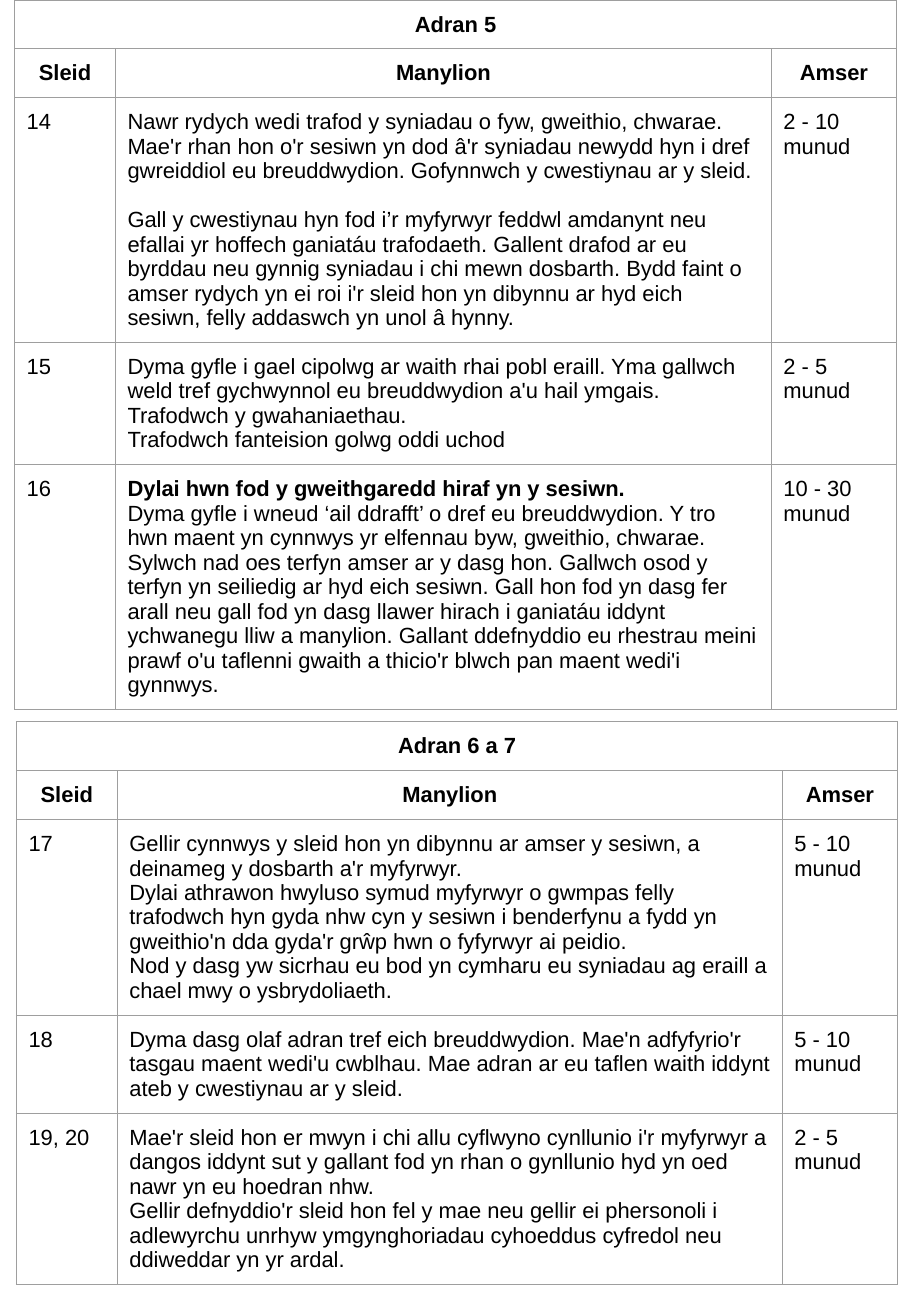
from dataclasses import dataclass

from lxml import etree
from pptx import Presentation
from pptx.dml.color import RGBColor
from pptx.enum.text import PP_ALIGN
from pptx.oxml.ns import qn
from pptx.util import Emu, Pt

CENTER = PP_ALIGN.CENTER
LEFT = PP_ALIGN.LEFT
PX = 4572
SLIDE_WIDTH, SLIDE_HEIGHT = 1500, 2166
HEADINGS = ("Sleid", "Manylion", "Amser")


@dataclass(frozen=True)
class Theme:
    font: str = "Arial"
    size: float = 13
    text: str = "000000"
    paper: str = "FFFFFF"
    border: str = "9E9E9E"
    border_width: float = 0.75
    inset: int = 20
    line: int = 40
    line_gap: float = 14.5


@dataclass(frozen=True)
class Line:
    text: str
    bold: bool = False
    gap: bool = False


SECTION_5 = [
    ("14", [
        Line("Nawr rydych wedi trafod y syniadau o fyw, gweithio, chwarae. Mae'r rhan hon o'r "
             "sesiwn yn dod â'r syniadau newydd hyn i dref gwreiddiol eu breuddwydion. "
             "Gofynnwch y cwestiynau ar y sleid."),
        Line("Gall y cwestiynau hyn fod i’r myfyrwyr feddwl amdanynt neu efallai yr hoffech "
             "ganiatáu trafodaeth. Gallent drafod ar eu byrddau neu gynnig syniadau i chi mewn "
             "dosbarth. Bydd faint o amser rydych yn ei roi i'r sleid hon yn dibynnu ar hyd "
             "eich sesiwn, felly addaswch yn unol â hynny.", gap=True),
    ], "2 - 10 munud", 9),
    ("15", [
        Line("Dyma gyfle i gael cipolwg ar waith rhai pobl eraill. Yma gallwch weld tref "
             "gychwynnol eu breuddwydion a'u hail ymgais."),
        Line("Trafodwch y gwahaniaethau."),
        Line("Trafodwch fanteision golwg oddi uchod"),
    ], "2 - 5 munud", 4),
    ("16", [
        Line("Dylai hwn fod y gweithgaredd hiraf yn y sesiwn.", bold=True),
        Line("Dyma gyfle i wneud ‘ail ddrafft’ o dref eu breuddwydion. Y tro hwn maent yn "
             "cynnwys yr elfennau byw, gweithio, chwarae. Sylwch nad oes terfyn amser ar y "
             "dasg hon. Gallwch osod y terfyn yn seiliedig ar hyd eich sesiwn. Gall hon fod yn "
             "dasg fer arall neu gall fod yn dasg llawer hirach i ganiatáu iddynt ychwanegu "
             "lliw a manylion. Gallant ddefnyddio eu rhestrau meini prawf o'u taflenni gwaith "
             "a thicio'r blwch pan maent wedi'i gynnwys."),
    ], "10 - 30 munud", 9),
]

SECTIONS_6_7 = [
    ("17", [
        Line("Gellir cynnwys y sleid hon yn dibynnu ar amser y sesiwn, a deinameg y dosbarth "
             "a'r myfyrwyr."),
        Line("Dylai athrawon hwyluso symud myfyrwyr o gwmpas felly trafodwch hyn gyda nhw cyn y "
             "sesiwn i benderfynu a fydd yn gweithio'n dda gyda'r grŵp hwn o fyfyrwyr ai peidio."),
        Line("Nod y dasg yw sicrhau eu bod yn cymharu eu syniadau ag eraill a chael mwy o "
             "ysbrydoliaeth."),
    ], "5 - 10 munud", 7),
    ("18", [
        Line("Dyma dasg olaf adran tref eich breuddwydion. Mae'n adfyfyrio'r tasgau maent "
             "wedi'u cwblhau. Mae adran ar eu taflen waith iddynt ateb y cwestiynau ar y sleid."),
    ], "5 - 10 munud", 3),
    ("19, 20", [
        Line("Mae'r sleid hon er mwyn i chi allu cyflwyno cynllunio i'r myfyrwyr a dangos "
             "iddynt sut y gallant fod yn rhan o gynllunio hyd yn oed nawr yn eu hoedran nhw."),
        Line("Gellir defnyddio'r sleid hon fel y mae neu gellir ei phersonoli i adlewyrchu "
             "unrhyw ymgynghoriadau cyhoeddus cyfredol neu ddiweddar yn yr ardal."),
    ], "2 - 5 munud", 6),
]


class LessonPage:
    def __init__(self, page, theme):
        self.page = page
        self.theme = theme

    def borders(self, cell):
        properties = cell._tc.get_or_add_tcPr()
        for side in ("a:lnL", "a:lnR", "a:lnT", "a:lnB"):
            edge = etree.SubElement(properties, qn(side), w=str(Pt(self.theme.border_width)))
            fill = etree.SubElement(edge, qn("a:solidFill"))
            etree.SubElement(fill, qn("a:srgbClr"), val=self.theme.border)

    def cell(self, cell, lines, align=LEFT):
        theme = self.theme
        self.borders(cell)
        cell.fill.solid()
        cell.fill.fore_color.rgb = RGBColor.from_string(theme.paper)
        inset = Emu(theme.inset * PX)
        cell.margin_left = cell.margin_right = inset
        cell.margin_top = cell.margin_bottom = inset
        frame = cell.text_frame
        for index, line in enumerate(lines):
            para = frame.add_paragraph() if index else frame.paragraphs[0]
            para.text = line.text
            para.alignment = align
            para.space_before = Pt(theme.line_gap if line.gap else 0)
            para.font.name = theme.font
            para.font.size = Pt(theme.size)
            para.font.bold = line.bold
            para.font.color.rgb = RGBColor.from_string(theme.text)

    def section(self, left, top, widths, title, entries):
        theme = self.theme
        line_counts = [1, 1] + [count for *_, count in entries]
        heights = [count * theme.line + 2 * theme.inset for count in line_counts]
        bounds = [Emu(value * PX) for value in (left, top, sum(widths), sum(heights))]
        table = self.page.shapes.add_table(len(heights), len(widths), *bounds).table
        table.first_row = False
        table.horz_banding = False
        for column, width in zip(table.columns, widths):
            column.width = Emu(width * PX)
        for row, height in zip(table.rows, heights):
            row.height = Emu(height * PX)

        table.cell(0, 0).merge(table.cell(0, len(widths) - 1))
        for row, labels in enumerate(((title, "", ""), HEADINGS)):
            for column, label in enumerate(labels):
                self.cell(table.cell(row, column), [Line(label, bold=True)], CENTER)
        for row, (number, details, duration, _) in enumerate(entries, start=2):
            for column, lines in enumerate(([Line(number)], details, [Line(duration)])):
                self.cell(table.cell(row, column), lines)


def main():
    deck = Presentation()
    deck.slide_width = Emu(SLIDE_WIDTH * PX)
    deck.slide_height = Emu(SLIDE_HEIGHT * PX)
    lesson = LessonPage(deck.slides.add_slide(deck.slide_layouts[6]), Theme())
    lesson.section(24, 0, (166, 1080, 206), "Adran 5", SECTION_5)
    lesson.section(27, 1188, (166, 1095, 190), "Adran 6 a 7", SECTIONS_6_7)
    deck.save("out.pptx")


if __name__ == "__main__":
    main()
